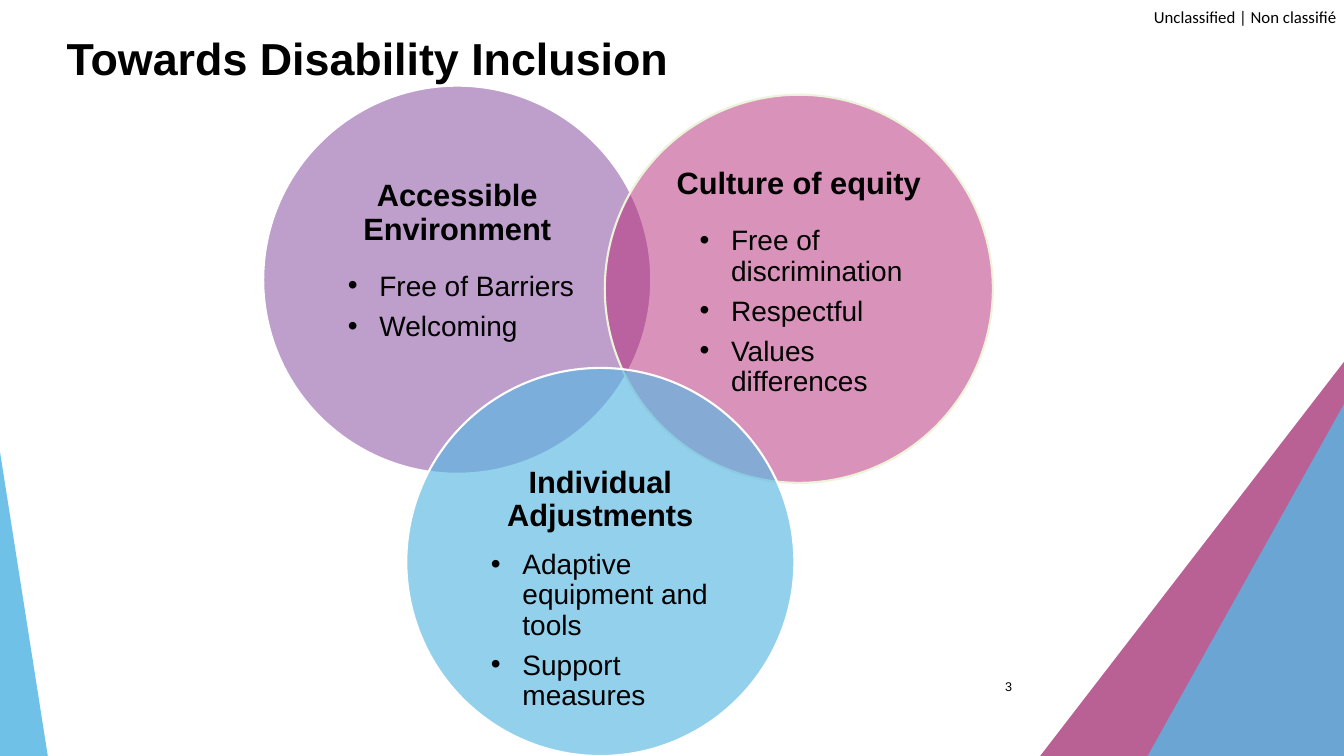
from lxml import etree
from pptx import Presentation
from pptx.dml.color import RGBColor
from pptx.enum.shapes import MSO_SHAPE
from pptx.enum.text import MSO_ANCHOR, PP_ALIGN
from pptx.oxml.ns import qn
from pptx.util import Pt

TITLE = "Towards Disability Inclusion"
MARKING = "Unclassified | Non classifié"
PAGE = "3"
TRIANGLES = [
    (738, 258.5, 222, 288, 1, "9E246B", 72),
    (816.6, 288.6, 143.4, 257, 1, "58B7E3", 80),
    (0, 322.6, 35.2, 224, 0, "58B7E3", 85),
]
DIAMETER = 277.2
CIRCLES = [
    dict(at=(188, 61.2), fill=("7F3F98", 50), line="FFFFFF", top=3.6, bottom=30,
         gap=18, indent=35.3, head="Accessible Environment",
         items=["Free of Barriers", "Welcoming"]),
    dict(at=(432, 67.7), fill=("B52775", 50), line="EDF3DA", top=0, bottom=8.6,
         gap=18, indent=42.5, head="Culture of equity",
         items=["Free of discrimination", "Respectful", "Values differences"]),
    dict(at=(290.2, 262.8), fill=("58B7E3", 65), line="FFFFFF", top=42.5, bottom=3.6,
         gap=12, indent=35.3, head="Individual Adjustments",
         items=["Adaptive equipment and tools", "Support measures"]),
]
HANGING = 22.5


def rgb(value):
    return RGBColor.from_string(value)


def style(p, size, font="Arial", bold=False):
    for r in p.runs:
        r.font.size, r.font.name, r.font.bold = Pt(size), font, bold
        r.font.color.rgb = rgb("000000")


def place(sp, x, y, w, h):
    sp.left, sp.top, sp.width, sp.height = Pt(x), Pt(y), Pt(w), Pt(h)


def add_filled(s, kind, x, y, w, h, color, opacity):
    sp = s.shapes.add_shape(kind, Pt(x), Pt(y), Pt(w), Pt(h))
    sp.shadow.inherit = False
    sp.fill.solid()
    sp.fill.fore_color.rgb = rgb(color)
    clr = sp.fill._xPr.find(qn("a:solidFill"))[0]
    etree.SubElement(clr, qn("a:alpha"), val=str(opacity * 1000))
    sp.line.fill.background()
    return sp


def add_label(s, text, x, y, w, h, size, font, inset=(7.2, 3.6)):
    sp = s.shapes.add_textbox(Pt(x), Pt(y), Pt(w), Pt(h))
    tf = sp.text_frame
    tf.text = text
    tf.margin_left = tf.margin_right = Pt(inset[0])
    tf.margin_top = tf.margin_bottom = Pt(inset[1])
    style(tf.paragraphs[0], size, font)
    return tf


def add_bullet(p, indent):
    pPr = p._p.get_or_add_pPr()
    pPr.set("marL", str(Pt(indent)))
    pPr.set("indent", str(-Pt(HANGING)))
    etree.SubElement(pPr, qn("a:buFont"), typeface="Arial")
    etree.SubElement(pPr, qn("a:buChar"), char="•")


def add_circle(s, c):
    sp = add_filled(s, MSO_SHAPE.OVAL, *c["at"], DIAMETER, DIAMETER, *c["fill"])
    sp.line.color.rgb = rgb(c["line"])
    sp.line.width = Pt(1.5)
    tf = sp.text_frame
    tf.word_wrap = True
    tf.vertical_anchor = MSO_ANCHOR.MIDDLE
    tf.margin_left = tf.margin_right = Pt(7.2)
    tf.margin_top, tf.margin_bottom = Pt(c["top"]), Pt(c["bottom"])
    p = tf.paragraphs[0]
    p.text = c["head"]
    p.alignment = PP_ALIGN.CENTER
    p.line_spacing, p.space_after = 0.9, Pt(c["gap"])
    style(p, 22, bold=True)
    for item in c["items"]:
        p = tf.add_paragraph()
        p.text = item
        p.alignment = PP_ALIGN.LEFT
        p.line_spacing, p.space_after = 0.9, Pt(7)
        add_bullet(p, c["indent"])
        style(p, 20)


def main():
    prs = Presentation()
    prs.slide_width, prs.slide_height = Pt(960), Pt(540)
    s = prs.slides.add_slide(prs.slide_layouts[5])

    for x, y, w, h, apex, color, opacity in TRIANGLES:
        sp = add_filled(s, MSO_SHAPE.ISOSCELES_TRIANGLE, x, y, w, h, color, opacity)
        sp.adjustments[0] = apex

    add_label(s, MARKING, 824.2, 5, 134, 14.4, 12, "Calibri", (0, 0))

    title = s.shapes.title
    place(title, 40.3, 18, 676.8, 63.4)
    title.text_frame.text = TITLE
    title.text_frame.vertical_anchor = MSO_ANCHOR.TOP
    p = title.text_frame.paragraphs[0]
    p.alignment = PP_ALIGN.LEFT
    style(p, 32, bold=True)

    tf = add_label(s, PAGE, 676, 476, 54, 28.8, 9, "Arial")
    tf.word_wrap = True
    tf.vertical_anchor = MSO_ANCHOR.MIDDLE
    tf.paragraphs[0].alignment = PP_ALIGN.RIGHT

    for c in CIRCLES:
        add_circle(s, c)
    prs.save("out.pptx")


if __name__ == "__main__":
    main()
